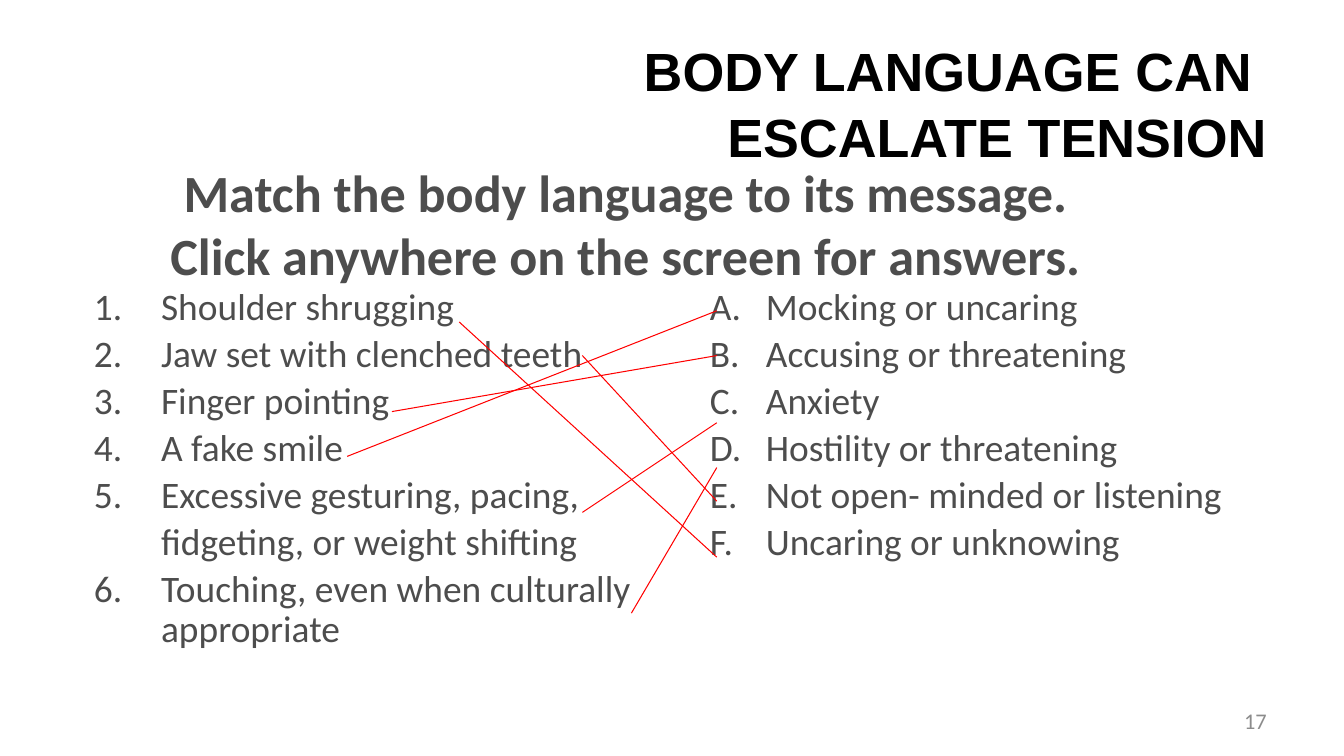
import pptx
import pptx.util
import pptx.dml.color
import pptx.enum.shapes
import pptx.enum.text
import pptx.oxml.ns
from lxml import etree

Pt = pptx.util.Pt
ALIGN = pptx.enum.text.PP_ALIGN
ANCHOR = pptx.enum.text.MSO_ANCHOR
GREY = "4D4D4D"


def rgb(value):
    return pptx.dml.color.RGBColor.from_string(value)


def add_text(p, text, size=26.7, color=GREY, bold=False, font="Calibri"):
    r = p.add_run()
    r.text = text
    r.font.name = font
    r.font.size = Pt(size)
    r.font.bold = bold
    r.font.color.rgb = rgb(color)
    return r


class Deck:
    """Holds the style and the current slide."""

    def __init__(self, width, height):
        self.prs = pptx.Presentation()
        self.prs.slide_width, self.prs.slide_height = Pt(width), Pt(height)
        self.s = self.prs.slides.add_slide(self.prs.slide_layouts[5])

    def title(self, lines, left, top, width, height):
        sp = self.s.shapes.title
        sp.left, sp.top, sp.width, sp.height = map(Pt, (left, top, width, height))
        tf = sp.text_frame
        tf.vertical_anchor = ANCHOR.MIDDLE
        p = tf.paragraphs[0]
        p.alignment = ALIGN.RIGHT
        p.line_spacing = Pt(46.5)
        for i, line in enumerate(lines):
            if i:
                p.add_line_break()
            add_text(p, line, size=38.4, color="000000", bold=True, font="Arial")

    def box(self, left, top, width, height, anchor=ANCHOR.TOP):
        sp = self.s.shapes.add_textbox(*map(Pt, (left, top, width, height)))
        tf = sp.text_frame
        tf.word_wrap = True
        tf.vertical_anchor = anchor
        return tf

    def text(self, lines, left, top, width, height, align, anchor=ANCHOR.TOP, **fmt):
        tf = self.box(left, top, width, height, anchor)
        for i, line in enumerate(lines):
            p = tf.add_paragraph() if i else tf.paragraphs[0]
            p.alignment = align
            add_text(p, line, **fmt)

    def numbered(self, items, left, top, width, height, scheme, margin, hang):
        """Items are (start number or None for no number, text)."""
        tf = self.box(left, top, width, height)
        tf.margin_top = 0
        for i, (start, line) in enumerate(items):
            p = tf.add_paragraph() if i else tf.paragraphs[0]
            p.line_spacing = 0.9
            p.space_before = Pt(4.7 if i else 0)
            pPr = p._p.get_or_add_pPr()
            pPr.set("marL", str(Pt(margin)))
            pPr.set("indent", str(Pt(-hang) if start else 0))
            if start:
                bu = etree.SubElement(pPr, pptx.oxml.ns.qn("a:buAutoNum"), type=scheme)
                if start > 1:
                    bu.set("startAt", str(start))
            add_text(p, line)

    def line(self, x1, y1, x2, y2, color="FF0000", width=0.75):
        c = self.s.shapes.add_connector(
            pptx.enum.shapes.MSO_CONNECTOR.STRAIGHT, *map(Pt, (x1, y1, x2, y2)))
        c.line.color.rgb = rgb(color)
        c.line.width = Pt(width)
        etree.SubElement(c._element.spPr, pptx.oxml.ns.qn("a:effectLst"))


def main():
    deck = Deck(960, 540)

    # Title and instructions
    deck.title(["BODY LANGUAGE CAN ", "ESCALATE TENSION"], 44.6, 32.4, 867.6, 82)
    deck.text(["Match the body language to its message.",
               "Click anywhere on the screen for answers."],
              63, 111, 768, 98, ALIGN.CENTER, size=37.3, bold=True)

    # Body language and messages
    signs = [(1, "Shoulder shrugging"),
             (1, "Jaw set with clenched teeth"),
             (1, "Finger pointing"),
             (1, "A fake smile"),
             (1, "Excessive gesturing, pacing,"),
             (None, "fidgeting, or weight shifting"),
             (6, "Touching, even when culturally appropriate")]
    messages = ["Mocking or uncaring", "Accusing or threatening", "Anxiety",
                "Hostility or threatening", "Not open- minded or listening",
                "Uncaring or unknowing"]
    deck.numbered(signs, 48, 206, 424, 276, "arabicPeriod", 60, 48)
    deck.numbered([(1, m) for m in messages], 488, 206, 424, 276,
                  "alphaUcPeriod", 52, 40)

    # Answer lines: start point and end height at the message column
    for x, y, end in [(328, 230, 398), (416, 254, 358), (280, 294, 254),
                      (248, 326, 222), (416, 366, 302), (451, 438, 334)]:
        deck.line(x, y, 512, end)

    # Slide number
    deck.text(["17"], 688, 500.5, 224, 28.8, ALIGN.RIGHT, ANCHOR.MIDDLE,
              size=16, color="8C8C8C")

    deck.prs.save("out.pptx")


if __name__ == "__main__":
    main()
